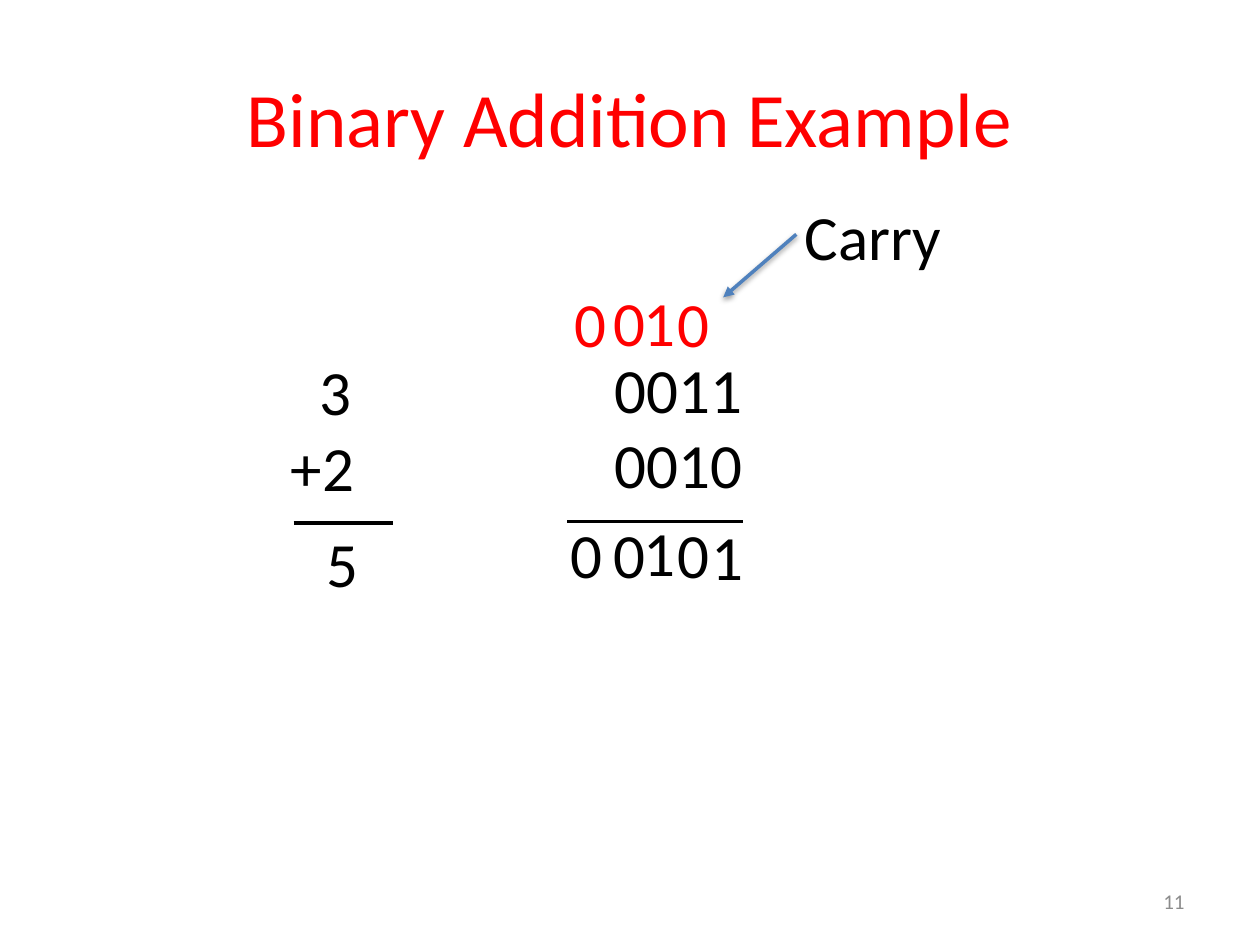
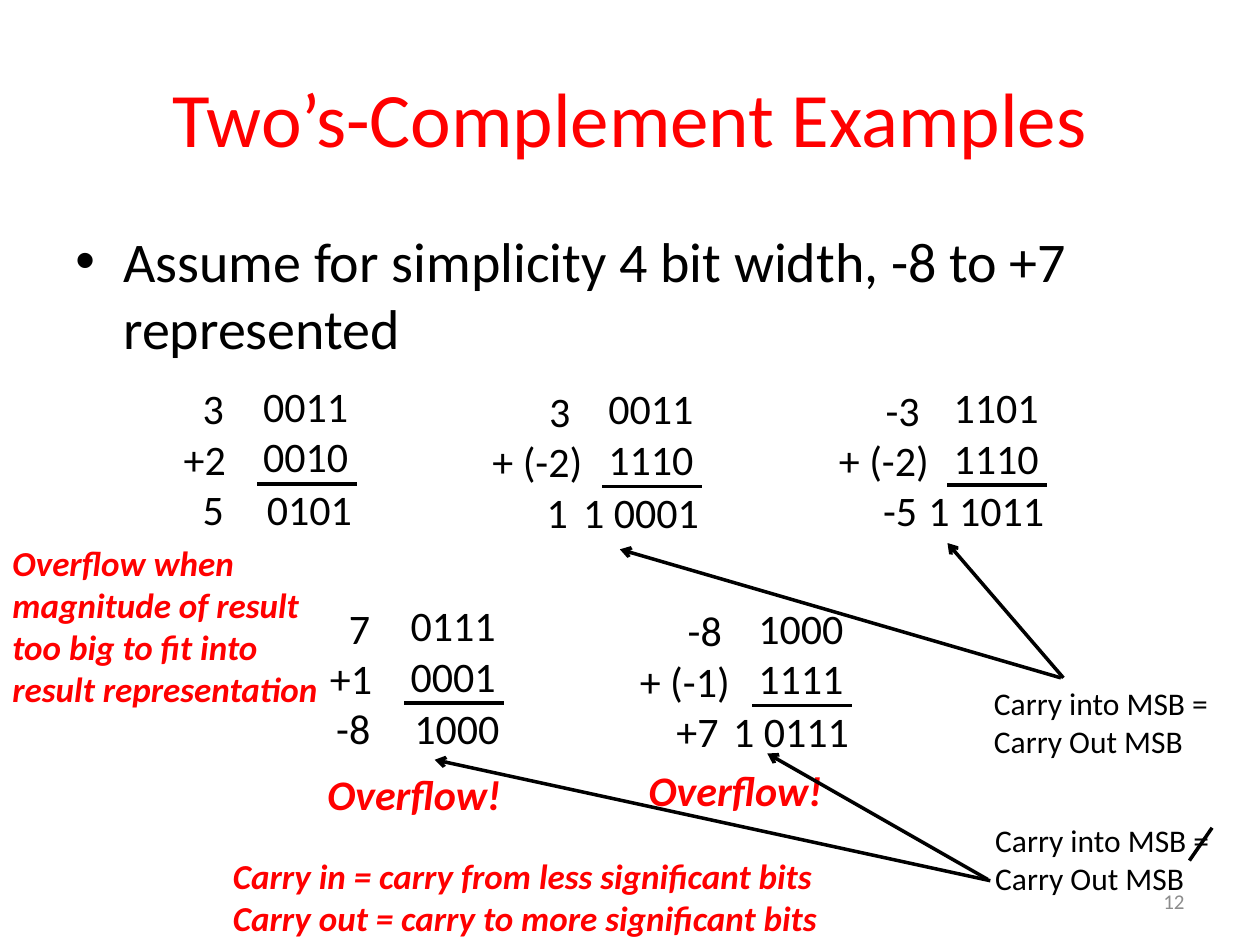
from lxml import etree
from pptx import Presentation
from pptx.dml.color import RGBColor
from pptx.enum.shapes import MSO_CONNECTOR as CONN
from pptx.enum.text import MSO_ANCHOR as ANCHOR, PP_ALIGN as ALIGN
from pptx.oxml.ns import qn
from pptx.util import Inches, Pt

BLACK, RED, GREY, BLUE = "000000", "FF0000", "8C8C8C", "4F81BD"
SHOUT = {"color": RED, "bold": True, "italic": True}


def rgb(value):
    return RGBColor.from_string(value)


def sub(parent, tag, **attrs):
    return etree.SubElement(parent, qn(tag), attrs)


class Deck:
    font = "Calibri"
    line_width = Pt(2)

    def __init__(self):
        self.prs = Presentation()
        self.prs.slide_width, self.prs.slide_height = Inches(10), Inches(7.5)
        self.s = None

    def slide(self, title, number):
        self.s = self.prs.slides.add_slide(self.prs.slide_layouts[6])
        self.text(0.5, 0.3, 9, 1.25, [title], 44, color=RED, wrap=True,
                  align=ALIGN.CENTER, anchor=ANCHOR.MIDDLE)
        self.text(7.17, 6.95, 2.33, 0.4, [str(number)], 12, color=GREY, wrap=True,
                  align=ALIGN.RIGHT, anchor=ANCHOR.MIDDLE)

    def text(self, x, y, w, h, lines, size, color=BLACK, bold=False, italic=False,
             wrap=False, align=ALIGN.LEFT, anchor=ANCHOR.TOP, indents=()):
        sp = self.s.shapes.add_textbox(Inches(x), Inches(y), Inches(w), Inches(h))
        tf = sp.text_frame
        tf.word_wrap, tf.vertical_anchor = wrap, anchor
        fmt = {"name": self.font, "size": Pt(size), "bold": bold, "italic": italic}
        for i, line in enumerate(lines):
            p = tf.paragraphs[0] if i == 0 else tf.add_paragraph()
            p.alignment = align
            if indents:
                p._p.get_or_add_pPr().set("marL", str(Inches(indents[i])))
            r = p.add_run()
            r.text = line
            for key, value in fmt.items():
                setattr(r.font, key, value)
            r.font.color.rgb = rgb(color)
        return sp

    def bullet(self, x, y, w, h, line, size):
        sp = self.text(x, y, w, h, [line], size, wrap=True, indents=[0.38])
        pPr = sp.text_frame.paragraphs[0]._p.get_or_add_pPr()
        pPr.set("indent", str(-Inches(0.38)))
        sub(pPr, "a:buFont", typeface="Arial")
        sub(pPr, "a:buChar", char="•")

    def line(self, start, end, color=BLACK, head=None, shadow=False):
        sp = self.s.shapes.add_connector(CONN.STRAIGHT, *map(Inches, start + end))
        sp.line.color.rgb, sp.line.width = rgb(color), self.line_width
        if head:
            sub(sp.line._get_or_add_ln(), "a:tailEnd", type=head)
        effects = sub(sp._element.spPr, "a:effectLst")
        if shadow:
            outer = sub(effects, "a:outerShdw", blurRad=str(Pt(3.1)), dist=str(Pt(1.6)),
                        dir="5400000", rotWithShape="0")
            sub(sub(outer, "a:srgbClr", val=BLACK), "a:alpha", val="38000")

    def digits(self, places, color=BLACK):
        for digit, x, y in places:
            self.text(x, y, 0.46, 0.71, [digit], 36, color)

    def sum(self, x, y, bits, operands, result, result_bits):
        self.text(x, y, 0.88, 0.91, bits, 24)
        left, width, numbers, indents = operands
        self.text(left, y + 0.02, width, 0.91, numbers, 24, indents=indents)
        self.line((x + 0.05, y + 0.87), (x + 0.84, y + 0.87))
        left, width, number = result
        self.text(left, y + 0.82, width, 0.5, [number], 24)
        carried = len(result_bits) > 4
        self.text(x - 0.2 if carried else x + 0.03, y + 0.82,
                  1.13 if carried else 0.88, 0.5, [result_bits], 24)

    def carry_note(self, x, y):
        self.text(x, y, 1.92, 0.71, ["Carry into MSB =", "Carry Out MSB"], 18)


def addition_slide(deck):
    deck.slide("Binary Addition Example", 11)
    deck.text(4.78, 2.73, 1.23, 1.31, ["0011", "0010"], 36)
    deck.text(2.21, 2.75, 0.71, 1.31, ["3", "+2"], 36, indents=[0.23, 0])
    deck.line((2.33, 4.15), (3.12, 4.15))
    deck.line((4.5, 4.14), (5.9, 4.14))
    deck.digits([("5", 2.49, 4.11), ("0", 4.43, 4.04), ("0", 4.77, 4.04),
                 ("1", 5.01, 4.03), ("0", 5.28, 4.04), ("1", 5.55, 4.06)])
    deck.digits([("0", 4.46, 2.21), ("0", 4.77, 2.2),
                 ("1", 5.01, 2.2), ("0", 5.28, 2.21)], RED)
    deck.line((6.32, 1.86), (5.74, 2.36), BLUE, "triangle", shadow=True)
    deck.text(6.29, 1.52, 1.76, 0.71, ["Carry"], 36, wrap=True)


def complement_slide(deck):
    deck.slide("Two’s-Complement Examples", 12)
    deck.bullet(0.5, 1.75, 9, 1.24,
                "Assume for simplicity 4 bit width, -8 to +7 represented", 32)
    sums = [
        (1.99, 2.97, ["0011", "0010"], (1.36, 0.54, ["3", "+2"], [0.15, 0]),
         (1.51, 0.37, "5"), "0101"),
        (4.73, 2.99, ["0011", "1110"], (3.73, 1, ["3", "+ (-2)"], [0.53, 0.08]),
         (4.24, 0.37, "1"), "1 0001"),
        (7.47, 2.98, ["1101", "1110"], (6.48, 1, ["-3", "+ (-2)"], [0.45, 0.08]),
         (6.91, 0.48, "-5"), "1 1011"),
        (3.16, 4.71, ["0111", "0001"], (2.52, 0.54, ["7", "+1"], [0.15, 0]),
         (2.57, 0.48, "-8"), "1000"),
        (5.92, 4.73, ["1000", "1111"], (4.98, 0.92, ["-8", "+ (-1)"], [0.38, 0]),
         (5.27, 0.54, "+7"), "1 0111"),
    ]
    for example in sums:
        deck.sum(*example)
    for x, y in [(2.5, 6.05), (5.05, 6.02)]:
        deck.text(x, y, 1.67, 0.5, ["Overflow!"], 24, **SHOUT)
    deck.carry_note(7.79, 5.38)
    deck.carry_note(7.8, 6.47)
    deck.line((9.44, 6.83), (9.62, 6.57))
    for start, end in [((8.44, 5.38), (7.52, 4.31)), ((8.42, 5.38), (4.92, 4.36)),
                       ((7.84, 6.98), (6.09, 5.98)), ((7.86, 6.99), (3.45, 6.03))]:
        deck.line(start, end, head="arrow")
    deck.text(0, 4.25, 2.71, 1.45,
              ["Overflow when magnitude of result too big to fit into result representation"],
              20, wrap=True, **SHOUT)
    deck.text(1.75, 6.73, 4.92, 0.77,
              ["Carry in = carry from less significant bits",
               "Carry out = carry to more significant bits"], 20, wrap=True, **SHOUT)


def main():
    deck = Deck()
    addition_slide(deck)
    complement_slide(deck)
    deck.prs.save("out.pptx")


if __name__ == "__main__":
    main()
